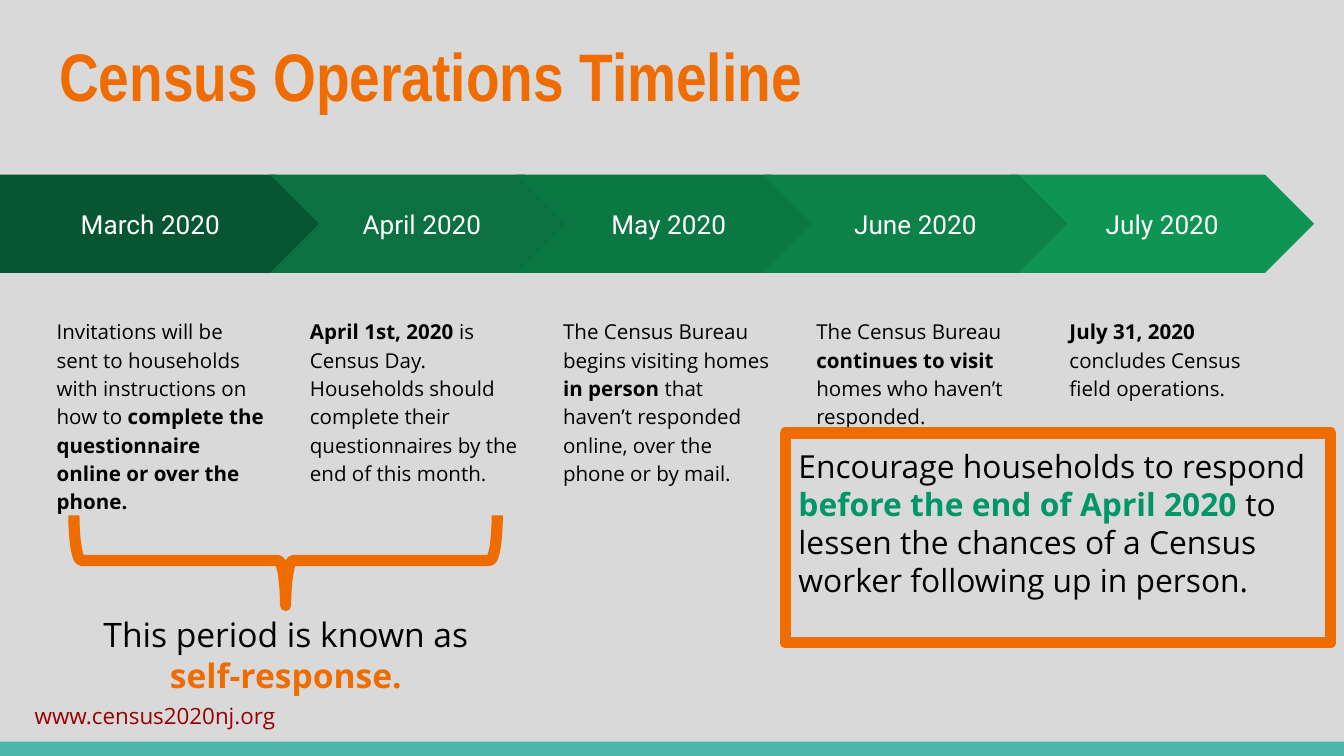
from pptx import Presentation
from pptx.dml.color import RGBColor
from pptx.enum.shapes import MSO_SHAPE as Shape
from pptx.enum.text import MSO_ANCHOR as Anchor, MSO_AUTO_SIZE as AutoSize, PP_ALIGN as Align
from pptx.util import Inches, Pt

CELL = Inches(0.1)
COLUMNS, ROWS = 100, 56.25

GRAY = RGBColor(0xD9, 0xD9, 0xD9)
TEAL = RGBColor(0x4D, 0xB6, 0xAC)
ORANGE = RGBColor(0xEF, 0x6C, 0x00)
GREEN = RGBColor(0x00, 0x96, 0x68)
MAROON = RGBColor(0x98, 0x00, 0x00)
BLACK = RGBColor(0, 0, 0)
WHITE = RGBColor(0xFF, 0xFF, 0xFF)

MONTHS = [
    ("March 2020", RGBColor(0x08, 0x56, 0x31), [
        ("Invitations will be sent to households with instructions on how to ", False),
        ("complete the questionnaire online or over the phone.", True)]),
    ("April 2020", RGBColor(0x0B, 0x71, 0x40), [
        ("April 1st, 2020 ", True),
        ("is Census Day. Households should complete their questionnaires "
         "by the end of this month.", False)]),
    ("May 2020", RGBColor(0x0B, 0x77, 0x43), [
        ("The Census Bureau begins visiting homes ", False),
        ("in person", True),
        (" that haven’t responded online, over the phone or by mail.", False)]),
    ("June 2020", RGBColor(0x0C, 0x81, 0x48), [
        ("The Census Bureau ", False),
        ("continues to visit ", True),
        ("homes who haven’t responded.", False)]),
    ("July 2020", RGBColor(0x0E, 0x94, 0x53), [
        ("July 31, 2020", True),
        (" concludes Census field operations.", False)]),
]
STACKING = (0, 1, 2, 4, 3)


def grid(*cells):
    """Convert counts of grid cells to lengths."""
    return [round(cell * CELL) for cell in cells]


def write(shape, runs, size, font="Open Sans", align=Align.LEFT, anchor=Anchor.TOP, spacing=1.0):
    """Fill a shape with one paragraph of (text, bold, colour) runs."""
    frame = shape.text_frame
    frame.word_wrap = True
    frame.auto_size = AutoSize.NONE
    frame.vertical_anchor = anchor
    frame.margin_left = frame.margin_right = frame.margin_top = frame.margin_bottom = CELL
    paragraph = frame.paragraphs[0]
    paragraph.alignment = align
    paragraph.line_spacing = spacing
    for text, bold, colour in runs:
        run = paragraph.add_run()
        run.text = text
        run.font.name = font
        run.font.size = Pt(size)
        run.font.bold = bold
        run.font.color.rgb = colour


def add_text(shapes, cells, runs, size, **style):
    """Add a wrapped text box."""
    write(shapes.add_textbox(*grid(*cells)), runs, size, **style)


def add_filled(shapes, kind, cells, colour):
    """Add a solid shape without an outline."""
    shape = shapes.add_shape(kind, *grid(*cells))
    shape.shadow.inherit = False
    shape.fill.solid()
    shape.fill.fore_color.rgb = colour
    shape.line.fill.background()
    return shape


def add_outlined(shapes, kind, cells):
    """Add a hollow shape with a thick orange outline."""
    shape = shapes.add_shape(kind, *grid(*cells))
    shape.shadow.inherit = False
    shape.fill.background()
    shape.line.color.rgb = ORANGE
    shape.line.width = Pt(6)
    return shape


def add_title(slide, text):
    """Place and format the title placeholder."""
    title = slide.shapes.title
    title.left, title.top, title.width, title.height = grid(3.4, 1.55, 93.2, 7.7)
    write(title, [(text, True, ORANGE)], 36, font="Arial Narrow")


def add_month(slide, index):
    """Add one step of the timeline with its explanation."""
    name, colour, details = MONTHS[index]
    shapes = slide.shapes.add_group_shape().shapes
    if index == 0:
        kind, left, width = Shape.PENTAGON, 0, 24.2
    else:
        kind, left, width = Shape.CHEVRON, 20.1 + 18.36 * (index - 1), 22.6
    arrow = add_filled(shapes, kind, (left, 13, width, 7.3), colour)
    write(arrow, [(name, False, WHITE)], 14, font="Roboto", align=Align.CENTER, anchor=Anchor.MIDDLE)
    runs = [(text, bold, BLACK) for text, bold in details]
    add_text(shapes, (3.23 + 18.84 * index, 22.5, 17.8, 25.7), runs, 11, spacing=1.15)


def add_self_response(slide):
    """Add the brace under March and April with its caption."""
    brace = add_outlined(slide.shapes, Shape.LEFT_BRACE, (17.9, 25.95, 6.7, 31.5))
    brace.rotation = 270
    add_text(slide.shapes, (4.13, 44.7, 34.3, 5.7), [
        ("This period is known as ", False, BLACK),
        ("self-response.", True, ORANGE)], 18, align=Align.CENTER)


def add_callout(slide):
    """Add the framed advice."""
    frame = add_outlined(slide.shapes, Shape.RECTANGLE, (58.43, 32.22, 40.6, 15.6))
    write(frame, [
        ("Encourage households to respond ", False, BLACK),
        ("before the end of April 2020 ", True, GREEN),
        ("to lessen the chances of a Census worker following up in person.", False, BLACK)], 17)


def add_footer(slide):
    """Add the web address and the bottom band."""
    add_text(slide.shapes, (1.6, 51.23, 24.3, 3.1), [("www.census2020nj.org", False, MAROON)], 12)
    add_filled(slide.shapes, Shape.RECTANGLE, (0, ROWS - 1.07, COLUMNS, 1.07), TEAL)


def main():
    """Build the census timeline slide."""
    presentation = Presentation()
    presentation.slide_width, presentation.slide_height = grid(COLUMNS, ROWS)
    slide = presentation.slides.add_slide(presentation.slide_layouts[5])
    slide.background.fill.solid()
    slide.background.fill.fore_color.rgb = GRAY
    add_footer(slide)
    add_title(slide, "Census Operations Timeline")
    for index in STACKING:
        add_month(slide, index)
    add_self_response(slide)
    add_callout(slide)
    presentation.save("out.pptx")


if __name__ == "__main__":
    main()
